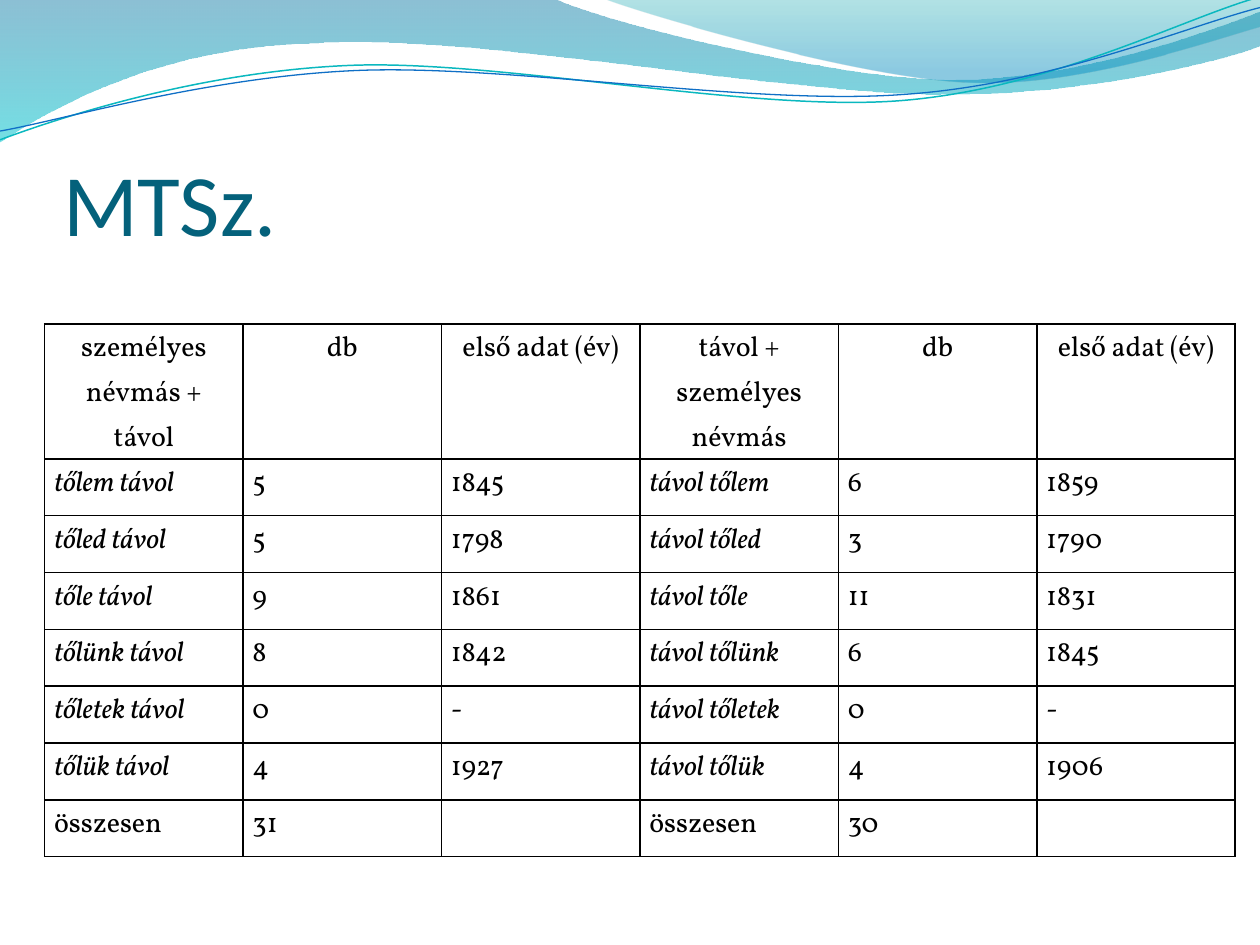
"""Build the MTSz. slide: a wave banner above a table of word-order counts."""
from dataclasses import dataclass
from math import cos, radians, sin

from lxml.etree import SubElement
from pptx import Presentation
from pptx.dml.color import RGBColor
from pptx.enum.text import MSO_ANCHOR, MSO_AUTO_SIZE, PP_ALIGN
from pptx.oxml.ns import qn
from pptx.util import Pt


@dataclass(frozen=True)
class Theme:
    title_font: str = "Calibri"
    title_size: int = 50
    title_color: str = "04617B"
    table_font: str = "Vollkorn"
    table_size: int = 16
    ink: str = "000000"
    border_width: float = 1
    left_wave: tuple = ((0, "0074A1", 45), (1, "00C6CF", 55))
    right_wave: tuple = ((0, "00A1A9", 30), (0.8, "008BBF", 45))
    teal_line: tuple = ("0AB8BF", 0.85)
    blue_line: tuple = ("0F6FC6", 0.75)


def add_wave(page, box, start, segments, closed, tilt=0):
    """Draw straight (2 values) and cubic (6 values) segments in a tilted box."""
    left, top, width, height = box
    middle_x, middle_y = left + width / 2, top + height / 2
    cosine, sine = cos(radians(tilt)), sin(radians(tilt))
    anchors = [(Pt(x), Pt(y)) for *_, x, y in segments]
    builder = page.shapes.build_freeform(Pt(start[0]), Pt(start[1]), scale=1.0)
    builder.add_line_segments(anchors, close=closed)
    wave = builder.convert_to_shape()
    wave.left, wave.top, wave.width, wave.height = (Pt(length) for length in box)
    wave.rotation = -tilt
    wave.shadow.inherit = False
    outline = next(wave._element.iter(qn("a:path")))
    outline.set("w", str(Pt(width)))
    outline.set("h", str(Pt(height)))
    for command in list(outline):
        outline.remove(command)
    names = {2: "a:lnTo", 6: "a:cubicBezTo"}
    commands = [("a:moveTo", start)] + [(names[len(values)], values) for values in segments]
    for name, values in commands:
        command = SubElement(outline, qn(name))
        for x, y in zip(values[::2], values[1::2]):
            across, down = x - middle_x, y - middle_y
            local_x = across * cosine - down * sine + width / 2
            local_y = across * sine + down * cosine + height / 2
            SubElement(command, qn("a:pt"), x=str(Pt(local_x)), y=str(Pt(local_y)))
    if closed:
        SubElement(outline, qn("a:close"))
    return wave


def style_run(span, font, size, color, italic=False):
    """Set the face, size, colour and slant of a run."""
    span.font.name = font
    span.font.size = Pt(size)
    span.font.color.rgb = RGBColor.from_string(color)
    span.font.italic = italic


theme = Theme()
deck = Presentation()
deck.slide_width, deck.slide_height = Pt(720), Pt(540)
page = deck.slides.add_slide(deck.slide_layouts[5])

filled_waves = [
    ((-0.7, -0.7, 721.4, 82.1), (0, 0), [
        (316.8, -0.7), (342.7, 12.2, 478.1, 45.4, 545.8, 45.4),
        (614.2, 45.4, 689.8, 18.7, 720, 6.5), (720.7, 25.9),
        (707.8, 31.7, 626.4, 54.7, 537.1, 54), (447.8, 54, 275, 20.2, 185, 24.5),
        (92.9, 25.9, 33.1, 59.8, -0.7, 81.4), (0, 0)], theme.left_wave),
    ((344.9, -0.7, 375.1, 50.4), (344.9, -0.7), [
        (366.5, 7.9, 491, 44.6, 553.7, 46.8),
        (616.3, 49.7, 691.9, 23, 720, 15.1), (720, 0), (344.9, -0.7)], theme.right_wave),
]
for box, start, segments, gradient in filled_waves:
    wave = add_wave(page, box, start, segments, True)
    wave.line.fill.background()
    wave.fill.gradient()
    wave.fill.gradient_angle = 270
    for stop, (position, color, opacity) in zip(wave.fill.gradient_stops, gradient):
        stop.position = position
        stop.color.rgb = RGBColor.from_string(color)
    colors = wave._element.spPr.iter(qn("a:srgbClr"))
    for color_node, (position, color, opacity) in zip(colors, gradient):
        SubElement(color_node, qn("a:alpha"), val=str(opacity * 1000))

line_waves = [
    ((-1.4, 15.8, 721.4, 51.1), (0, 79.9), [
        (34.6, 67, 113.8, 41, 199.4, 37.4), (284.4, 33.8, 427, 64.1, 513.4, 57.6),
        (599.8, 51.1, 675.4, 10.8, 718.6, -1.4)], theme.teal_line),
    ((-1.4, 21.6, 722.2, 41.8), (0, 74.9), [
        (33.8, 69.1, 118.1, 43.9, 203.8, 40.3), (290.2, 36.7, 429.8, 60.5, 516.2, 54),
        (601.9, 48.2, 677.5, 15.1, 720, 4.3)], theme.blue_line),
]
for box, start, segments, (color, width) in line_waves:
    wave = add_wave(page, box, start, segments, False, tilt=2.7)
    wave.fill.background()
    wave.line.color.rgb = RGBColor.from_string(color)
    wave.line.width = Pt(width)

title = page.shapes.title
title.left, title.top, title.width, title.height = Pt(36), Pt(55.2), Pt(648), Pt(90)
frame = title.text_frame
frame.text = "MTSz."
frame.auto_size = MSO_AUTO_SIZE.NONE
frame.vertical_anchor = MSO_ANCHOR.BOTTOM
frame.margin_left = frame.margin_right = frame.margin_bottom = 0
frame.margin_top = Pt(3.6)
frame.paragraphs[0].alignment = PP_ALIGN.LEFT
style_run(frame.paragraphs[0].runs[0], theme.title_font, theme.title_size, theme.title_color)

rows = [
    ("személyes névmás + távol", "db", "első adat (év)",
     "távol + személyes névmás", "db", "első adat (év)"),
    ("tőlem távol", "5", "1845", "távol tőlem", "6", "1859"),
    ("tőled távol", "5", "1798", "távol tőled", "3", "1790"),
    ("tőle távol", "9", "1861", "távol tőle", "11", "1831"),
    ("tőlünk távol", "8", "1842", "távol tőlünk", "6", "1845"),
    ("tőletek távol", "0", "-", "távol tőletek", "0", "-"),
    ("tőlük távol", "4", "1927", "távol tőlük", "4", "1906"),
    ("összesen", "31", "", "összesen", "30", ""),
]
header_height, row_height = 67, 32.5
table = page.shapes.add_table(
    len(rows), len(rows[0]), Pt(25.5), Pt(185.1), Pt(680.4),
    Pt(header_height + row_height * (len(rows) - 1))).table
table.first_row = table.horz_banding = False

for row_index, texts in enumerate(rows):
    is_header = row_index == 0
    is_total = row_index == len(rows) - 1
    table.rows[row_index].height = Pt(header_height if is_header else row_height)
    for column_index, text in enumerate(texts):
        cell = table.cell(row_index, column_index)
        cell.margin_left = cell.margin_right = Pt(5.4)
        cell.margin_top = cell.margin_bottom = 0
        properties = cell._tc.get_or_add_tcPr()
        for side in ("L", "R", "T", "B"):
            border = SubElement(properties, qn(f"a:ln{side}"), w=str(Pt(theme.border_width)))
            SubElement(SubElement(border, qn("a:solidFill")), qn("a:srgbClr"), val=theme.ink)
        cell.fill.background()
        if not text:
            continue
        cell.text_frame.text = text
        para = cell.text_frame.paragraphs[0]
        para.alignment = PP_ALIGN.CENTER if is_header else PP_ALIGN.JUSTIFY
        para.line_spacing = 1.15
        is_phrase = column_index % 3 == 0 and not is_header and not is_total
        style_run(para.runs[0], theme.table_font, theme.table_size, theme.ink, is_phrase)

deck.save("out.pptx")
